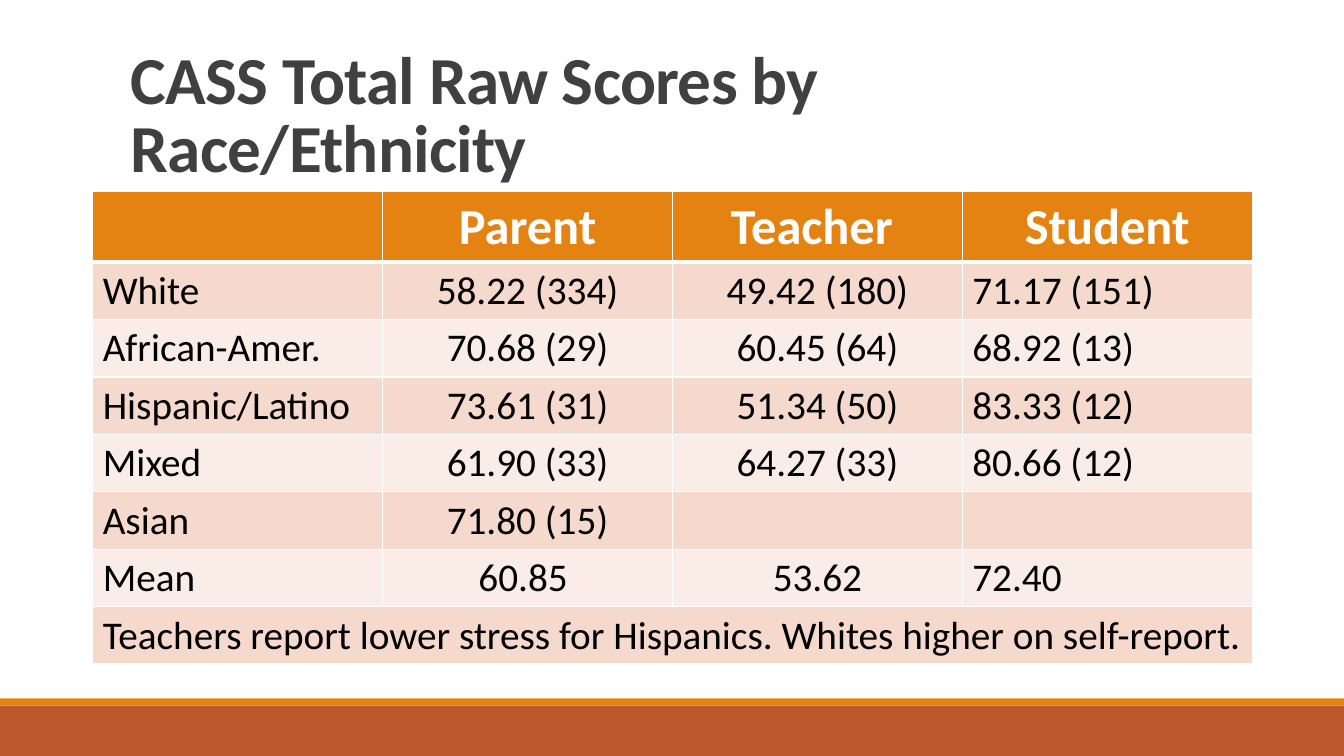
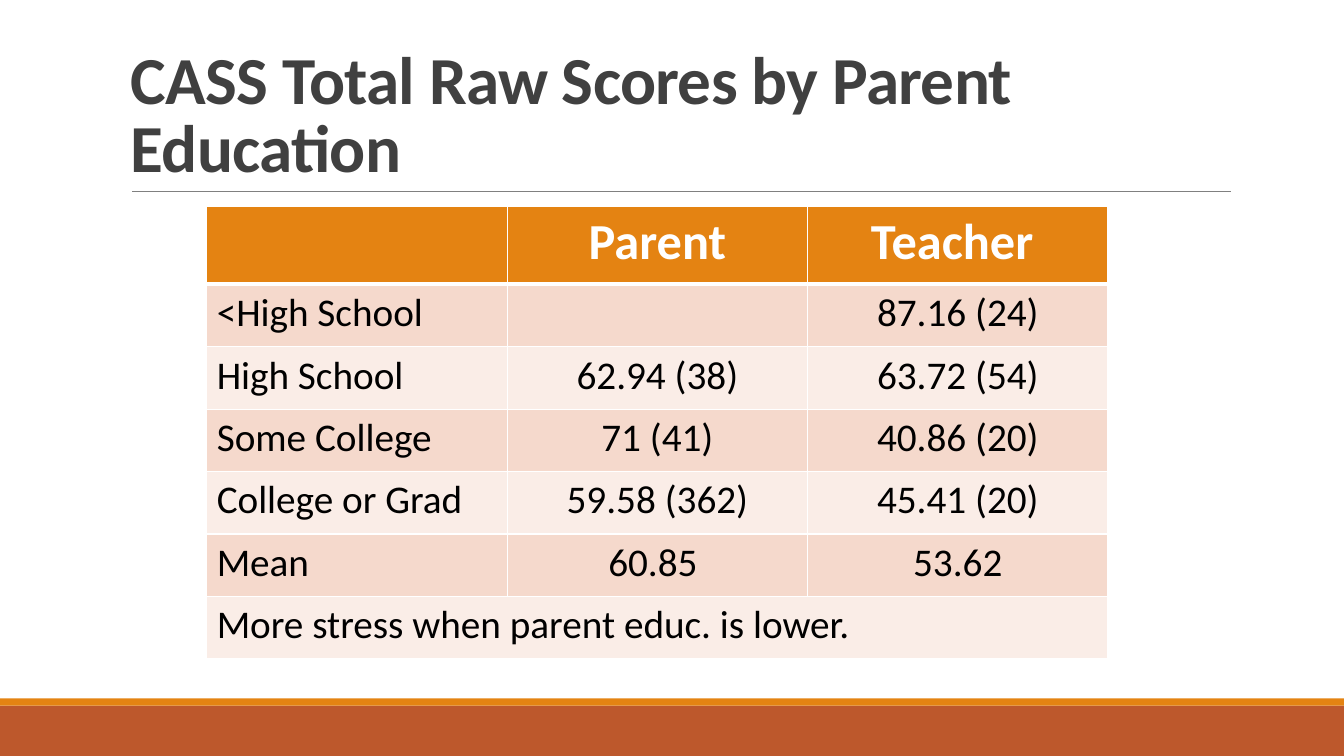
from lxml.etree import SubElement
from pptx import Presentation
from pptx.dml.color import RGBColor
from pptx.enum.shapes import MSO_CONNECTOR, MSO_SHAPE
from pptx.enum.text import MSO_ANCHOR, PP_ALIGN as ALIGN
from pptx.oxml.ns import qn
from pptx.util import Inches, Pt

COLORS = {"band": "BD582C", "accent": "E48312", "rule": "808080",
          "title": "404040", "header_text": "FFFFFF", "body_text": "000000",
          "border": "FFFFFF", "odd_row": "F5D9CC", "even_row": "FAEDE7"}
FONTS = {
    "title": {"name": "Calibri", "size": Pt(48), "bold": True},
    "header_text": {"name": "Calibri", "size": Pt(36), "bold": True},
    "body_text": {"name": "Calibri", "size": Pt(28), "bold": False},
}
SLIDE_W, SLIDE_H = 13.33, 7.5
BANDS = [("band", 7, 0.5), ("accent", 6.93, 0.07)]  # color, top, height

RACE_ROWS = [
    ["", "Parent", "Teacher ", "Student"],
    ["White", "58.22 (334)", "49.42 (180)", "71.17 (151)"],
    ["African-Amer.", "70.68 (29)", "60.45 (64)", "68.92 (13)"],
    ["Hispanic/Latino", "73.61 (31)", "51.34 (50)", "83.33 (12)"],
    ["Mixed", "61.90 (33)", "64.27 (33)", "80.66 (12)"],
    ["Asian", "71.80 (15)", "", ""],
    ["Mean", "60.85 ", "53.62", "72.40"],
]
EDUCATION_ROWS = [
    ["", "Parent", "Teacher "],
    ["<High School", "", "87.16 (24)"],
    ["High School", "62.94 (38)", "63.72 (54)"],
    ["Some College", "71 (41)", "40.86 (20)"],
    ["College or Grad", "59.58 (362)", "45.41 (20)"],
    ["Mean", "60.85 ", "53.62"],
]


def rgb(key):
    return RGBColor.from_string(COLORS[key])


def add_run(p, text, style):
    r = p.add_run()
    r.text = text
    for attr, value in FONTS[style].items():
        setattr(r.font, attr, value)
    r.font.color.rgb = rgb(style)
    return r


def add_bands(s):
    for color, top, height in BANDS:
        sp = s.shapes.add_shape(MSO_SHAPE.RECTANGLE, 0, Inches(top),
                                Inches(SLIDE_W), Inches(height))
        sp.shadow.inherit = False
        sp.fill.solid()
        sp.fill.fore_color.rgb = rgb(color)
        sp.line.fill.background()


def add_title_rule(s):
    line = s.shapes.add_connector(MSO_CONNECTOR.STRAIGHT, Inches(1.31),
                                  Inches(1.9), Inches(12.21), Inches(1.9))
    line.line.color.rgb = rgb("rule")
    line.line.width = Pt(0.5)
    SubElement(line._element.spPr, qn("a:effectLst"))


def add_title(s, text):
    tf = s.shapes.add_textbox(Inches(1.2), Inches(0.31),
                              Inches(11), Inches(1.59)).text_frame
    tf.word_wrap = True
    tf.vertical_anchor = MSO_ANCHOR.BOTTOM
    p = tf.paragraphs[0]
    p.line_spacing = 0.85
    r = add_run(p, text, "title")
    r.font._element.set("spc", "-50")


def set_borders(cell, top, bottom):
    """Draw all four cell borders; top and bottom are widths in points."""
    tcPr = cell._tc.get_or_add_tcPr()
    for side, width in {"L": 1, "R": 1, "T": top, "B": bottom}.items():
        ln = SubElement(tcPr, qn(f"a:ln{side}"), w=str(Pt(width)))
        fill = SubElement(ln, qn("a:solidFill"))
        SubElement(fill, qn("a:srgbClr"), val=COLORS["border"])


def fill_cell(cell, row, text, align):
    set_borders(cell, top=3 if row == 1 else 1, bottom=3 if row == 0 else 1)
    cell.fill.solid()
    stripe = "odd_row" if row % 2 else "even_row"
    cell.fill.fore_color.rgb = rgb(stripe if row else "accent")
    if text:
        p = cell.text_frame.paragraphs[0]
        p.alignment = align
        add_run(p, text, "body_text" if row else "header_text")


def add_score_table(s, rows, note, left, top, col_w, header_h, row_h, aligns):
    """Header row, striped score rows, and a note across the last row."""
    n_cols = len(rows[0])
    rows = rows + [[note] + [""] * (n_cols - 1)]
    height = header_h + row_h * (len(rows) - 1)
    table = s.shapes.add_table(len(rows), n_cols, Inches(left), Inches(top),
                               Inches(col_w * n_cols), Inches(height)).table
    for col in table.columns:
        col.width = Inches(col_w)
    for i, texts in enumerate(rows):
        table.rows[i].height = Inches(row_h if i else header_h)
        for j, text in enumerate(texts):
            align = aligns[j] if i else ALIGN.CENTER
            fill_cell(table.cell(i, j), i, text, align)
    last = len(rows) - 1
    table.cell(last, 0).merge(table.cell(last, n_cols - 1))


def add_score_slide(prs, title, **table):
    s = prs.slides.add_slide(prs.slide_layouts[6])
    add_bands(s)
    add_title_rule(s)
    add_title(s, title)
    add_score_table(s, **table)


def main():
    prs = Presentation()
    prs.slide_width, prs.slide_height = Inches(SLIDE_W), Inches(SLIDE_H)
    add_score_slide(
        prs, "CASS Total Raw Scores by Race/Ethnicity", rows=RACE_ROWS,
        note="Teachers report lower stress for Hispanics. "
             "Whites higher on self-report.",
        left=0.92, top=1.9, col_w=2.875, header_h=0.7, row_h=0.57,
        aligns=[ALIGN.LEFT, ALIGN.CENTER, ALIGN.CENTER, ALIGN.LEFT])
    add_score_slide(
        prs, "CASS Total Raw Scores by Parent Education", rows=EDUCATION_ROWS,
        note="More stress when parent educ. is lower.",
        left=2.05, top=2.05, col_w=2.98, header_h=0.77, row_h=0.62,
        aligns=[ALIGN.LEFT, ALIGN.CENTER, ALIGN.CENTER])
    prs.save("out.pptx")


if __name__ == "__main__":
    main()
